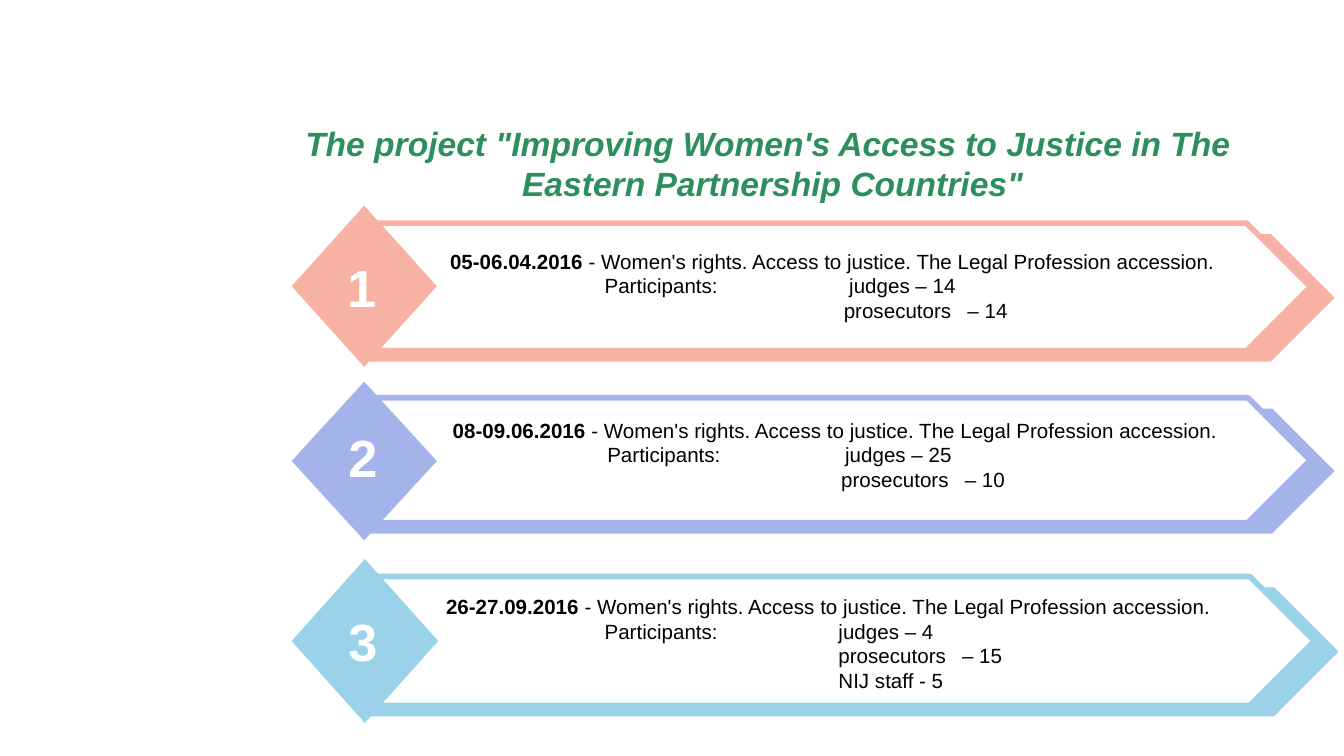
from lxml.etree import SubElement
from pptx import Presentation
from pptx.dml.color import RGBColor
from pptx.enum.shapes import MSO_SHAPE as Kind
from pptx.enum.text import MSO_ANCHOR as Anchor, MSO_AUTO_SIZE as Fit, PP_ALIGN as Align
from pptx.oxml.ns import qn
from pptx.util import Inches, Pt


def paint(part, color):
    part.solid()
    part.fore_color.rgb = RGBColor.from_string(color)


def style(para, size, color, bold=None):
    font = para.font
    font.name, font.size, font.bold = "Arial", Pt(size), bold
    paint(font.fill, color)


# Widescreen 16:9
deck = Presentation()
deck.slide_width = Inches(10)
deck.slide_height = Inches(10 * 9 / 16)
slide = deck.slides.add_slide(deck.slide_layouts[5])
shapes = slide.shapes

# Title
title = shapes.title
title.left, title.top = Inches(1.85), Inches(0.9)
title.width, title.height = Inches(7.8), Inches(0.63)
frame = title.text_frame
frame.auto_size = Fit.NONE
frame.vertical_anchor = Anchor.MIDDLE
frame.text = ("The project \"Improving Women's Access to Justice in The \n"
              "Eastern Partnership Countries\"")
for para in frame.paragraphs:
    para.alignment = Align.CENTER
    style(para, 18, "2C8F5D", True)
    para.font.italic = True

# Per row: colour, banner top, banner size, diamond top and size, number place,
# text left and top, tab stops (label, judges, others), date, attendance
rows = [
    ("F8B2A3", 1.66, (7.01, 0.95), 1.53, (1.08, 1.2), (2.47, 1.85), (3.25, 1.8),
     (1.15, 2.97, 2.93), "05-06.04.2016", ["judges – 14", "prosecutors\t– 14"]),
    ("A4B4EA", 2.96, (7.01, 0.93), 2.84, (1.08, 1.18), (2.48, 3.11), (3.27, 3.06),
     (1.15, 2.92, 2.89), "08-09.06.2016", ["judges – 25", "prosecutors\t– 10"]),
    ("9AD3E9", 4.29, (7.04, 0.96), 4.16, (1.09, 1.22), (2.48, 4.48), (3.22, 4.37),
     (1.18, 2.92, 2.92), "26-27.09.2016",
     ["judges – 4", "prosecutors\t– 15", "NIJ staff - 5"]),
]
topic = " - Women's rights. Access to justice. The\u00a0Legal Profession accession."

for num, row in enumerate(rows, 1):
    color, top, (wide, high), peak, (span, rise), mark, spot, stops, date, counts = row

    # Banner with its offset backing, and the diamond
    for kind, x, y, w, h, fill in [
        (Kind.PENTAGON, 2.74, top + 0.08, wide + 0.18, high, color),
        (Kind.PENTAGON, 2.74, top, wide, high, "FFFFFF"),
        (Kind.DIAMOND, 2.17, peak, span, rise, color),
    ]:
        shape = shapes.add_shape(kind, Inches(x), Inches(y), Inches(w), Inches(h))
        shape.shadow.inherit = False
        paint(shape.fill, fill)
        if fill == color:
            shape.line.fill.background()
        else:
            paint(shape.line.fill, color)
            shape.line.width = Pt(3)

    # Number
    x, y = mark
    box = shapes.add_textbox(Inches(x), Inches(y), Inches(0.44), Inches(0.57))
    frame = box.text_frame
    frame.word_wrap = True
    frame.vertical_anchor = Anchor.MIDDLE
    frame.text = str(num)
    para = frame.paragraphs[0]
    para.alignment = Align.CENTER
    style(para, 28, "FFFFFF", True)

    # Event and attendance
    x, y = spot
    tall = 0.3 + 0.18 * len(counts)
    box = shapes.add_textbox(Inches(x), Inches(y), Inches(6.08), Inches(tall))
    frame = box.text_frame
    frame.word_wrap = True
    para = frame.paragraphs[0]
    style(para, 11, "000000")
    run = para.add_run()
    run.text = date
    run.font.bold = True
    para.add_run().text = topic

    label, first, other = stops
    for i, count in enumerate(counts):
        para = frame.add_paragraph()
        para.text = ("\t" if i else "\tParticipants:\t") + count
        tabs = SubElement(para._p.get_or_add_pPr(), qn("a:tabLst"))
        for stop in (other, other + 0.92) if i else (label, first):
            SubElement(tabs, qn("a:tab"), pos=str(Inches(stop)), algn="l")
        style(para, 11, "000000")

deck.save("out.pptx")
